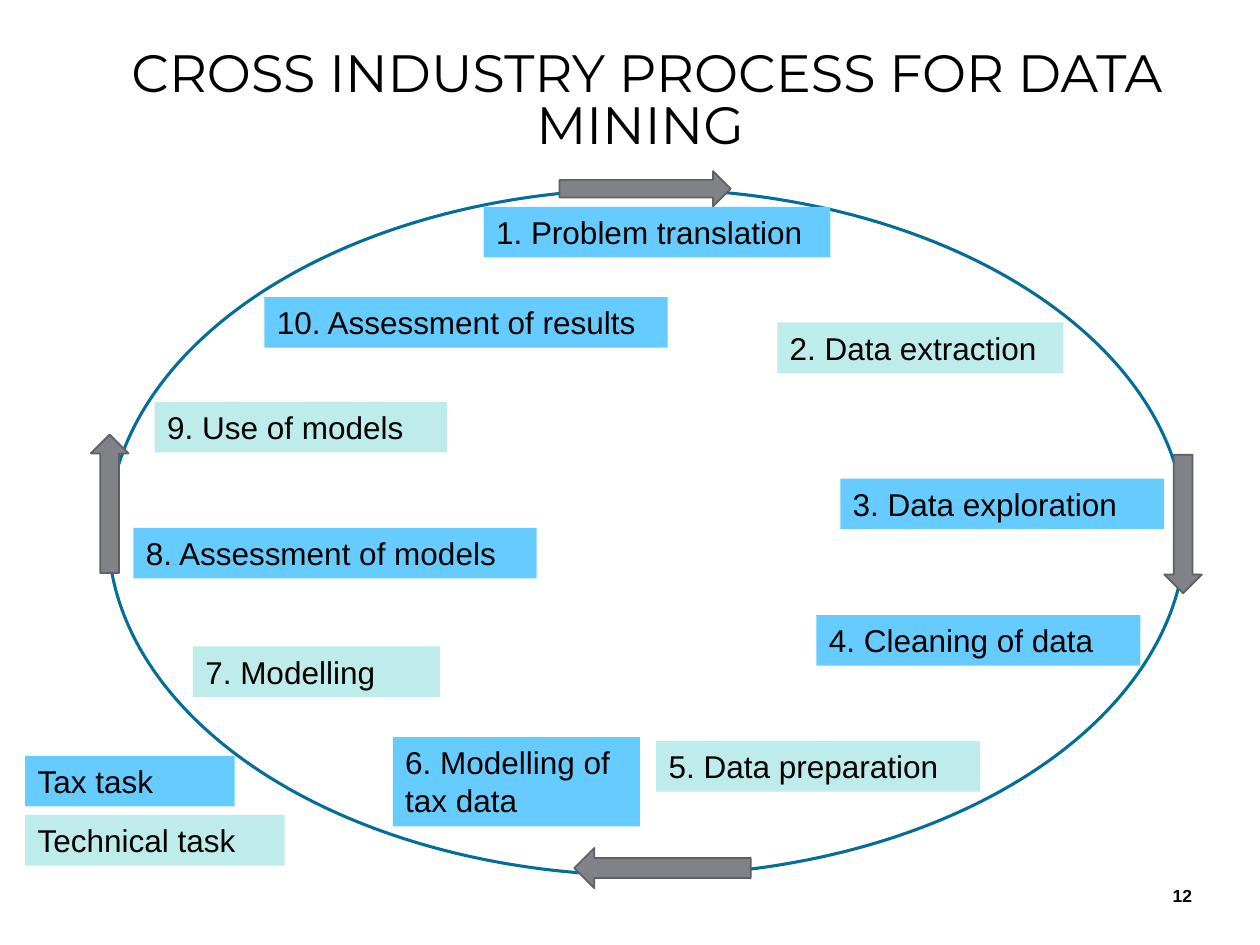
import pptx
import pptx.util
import pptx.dml.color
import pptx.enum.shapes
import pptx.enum.text

Cm, Pt = pptx.util.Cm, pptx.util.Pt
Kind = pptx.enum.shapes.MSO_SHAPE
Align = pptx.enum.text.PP_ALIGN
Anchor = pptx.enum.text.MSO_ANCHOR

# Content: lengths in cm
TITLE = "CROSS INDUSTRY PROCESS FOR DATA MINING "
TAX, TECH = "66CCFF", "BEECEA"
ROW, TALL = 1.02, 1.8

# text, task colour, left, top, width, height
STEPS = [
    ("1. Problem translation", TAX, 9.75, 4.17, 6.99, ROW),
    ("2. Data extraction", TECH, 15.67, 6.5, 5.77, ROW),
    ("3. Data exploration", TAX, 16.94, 9.65, 6.53, ROW),
    ("4. Cleaning of data", TAX, 16.46, 12.4, 6.53, ROW),
    ("5. Data preparation", TECH, 13.23, 14.94, 6.53, ROW),
    ("6. Modelling of tax data", TAX, 7.92, 14.86, 4.98, TALL),
    ("7. Modelling", TECH, 3.89, 13.03, 4.98, ROW),
    ("8. Assessment of models", TAX, 2.69, 10.64, 8.13, ROW),
    ("9. Use of models", TECH, 3.12, 8.1, 5.89, ROW),
    ("10. Assessment of results", TAX, 5.33, 5.99, 8.13, ROW),
]
LEGEND = [
    ("Tax task", TAX, 0.51, 15.24, 4.22, ROW),
    ("Technical task", TECH, 0.51, 16.43, 5.23, ROW),
]

# kind, box, turn in degrees
ARROWS = [
    (Kind.RIGHT_ARROW, (11.28, 3.45, 3.45, 0.71), 0),
    (Kind.DOWN_ARROW, (23.47, 9.17, 0.76, 2.79), 0),
    (Kind.DOWN_ARROW, (12.95, 15.72, 0.81, 3.56), 90),
    (Kind.DOWN_ARROW, (1.83, 8.76, 0.76, 2.79), 180),
]


def tint(code):
    return pptx.dml.color.RGBColor.from_string(code)


def draw(kind, box, fill, line=None, width=1):
    shape = slide.shapes.add_shape(kind, *map(Cm, box))
    shape.shadow.inherit = False
    shape.fill.solid()
    shape.fill.fore_color.rgb = tint(fill)
    if line:
        shape.line.color.rgb = tint(line)
        shape.line.width = Pt(width)
    else:
        shape.line.fill.background()
    return shape


def write(shape, text, size, face="Arial", align=Align.LEFT,
          anchor=Anchor.TOP, bold=False):
    frame = shape.text_frame
    frame.word_wrap = True
    frame.vertical_anchor = anchor
    para = frame.paragraphs[0]
    para.alignment = align
    run = para.add_run()
    run.text = text
    run.font.size = Pt(size)
    run.font.name = face
    run.font.bold = bold
    run.font.color.rgb = tint("000000")
    return para


deck = pptx.Presentation()
deck.slide_width, deck.slide_height = Cm(25.4), Cm(19.05)
slide = deck.slides.add_slide(deck.slide_layouts[6])

# Cycle ring
draw(Kind.OVAL, (2.18, 3.81, 21.72, 13.84), "FFFFFF", "046E98", 1.75)

# Steps and legend
for text, fill, *box in STEPS + LEGEND:
    write(draw(Kind.RECTANGLE, box, fill), text, 18)

# Arrows along the ring
for kind, box, turn in ARROWS:
    draw(kind, box, "808288", "5F6065").rotation = turn

# Title and page number
title = slide.shapes.add_textbox(*map(Cm, (0.51, 0.89, 25.07, 2.41)))
write(title, TITLE, 30, "Montserrat", Align.CENTER).line_spacing = 0.83
page = slide.shapes.add_textbox(*map(Cm, (22.17, 17.55, 2.11, 1.02)))
write(page, "12", 10, align=Align.RIGHT, anchor=Anchor.MIDDLE, bold=True)

deck.save("out.pptx")
